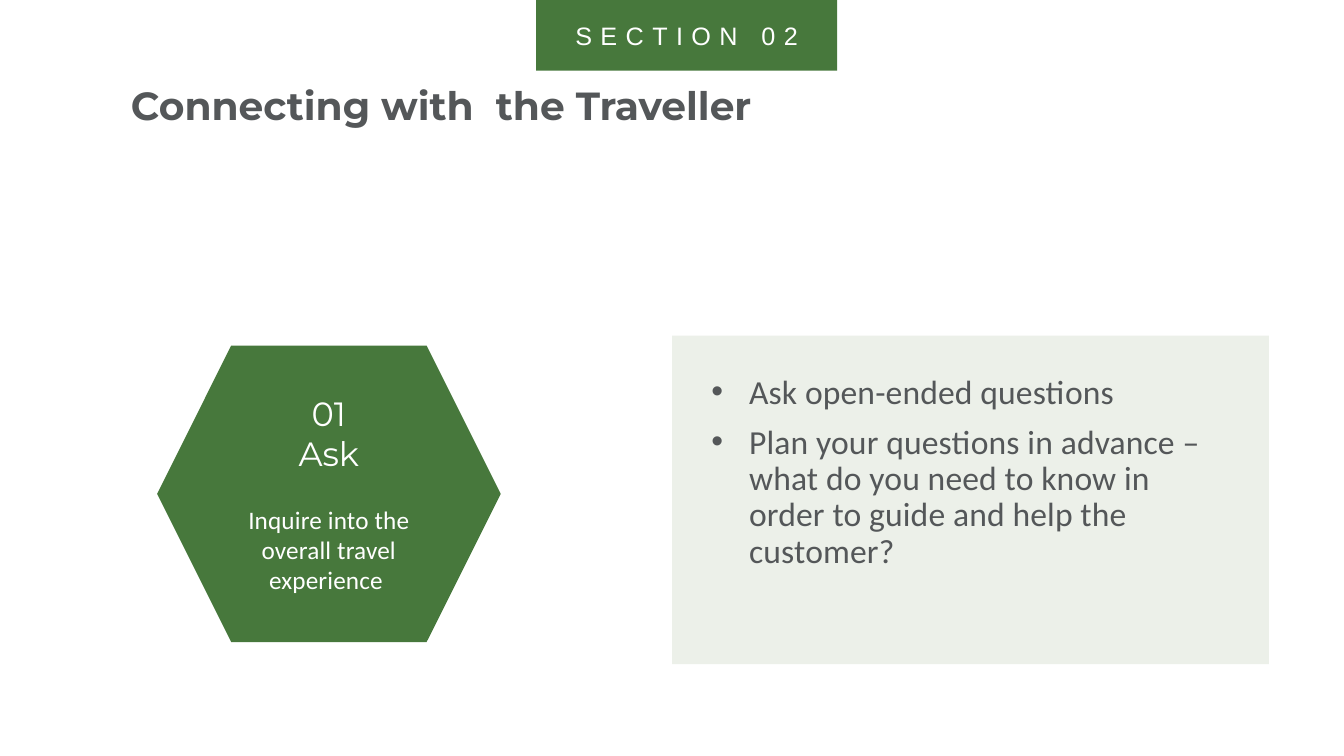
from lxml import etree
from pptx import Presentation
from pptx.dml.color import RGBColor
from pptx.enum.shapes import MSO_SHAPE
from pptx.enum.text import MSO_ANCHOR, PP_ALIGN
from pptx.oxml.ns import qn
from pptx.util import Cm, Pt

RECT, HEXAGON = MSO_SHAPE.RECTANGLE, MSO_SHAPE.HEXAGON
TOP, MIDDLE = MSO_ANCHOR.TOP, MSO_ANCHOR.MIDDLE
LEFT, CENTER = PP_ALIGN.LEFT, PP_ALIGN.CENTER
COLORS = {"green": "47783C", "pale": "ECF0E9", "gray": "545759", "white": "FFFFFF"}

prs = Presentation()
prs.slide_width, prs.slide_height = Cm(33.87), Cm(19.05)
s = prs.slides.add_slide(prs.slide_layouts[6])


def add_block(left, top, width, height, shape=None, fill=None, inset=None, anchor=TOP):
    box = Cm(left), Cm(top), Cm(width), Cm(height)
    if shape is None:
        sp = s.shapes.add_textbox(*box)
    else:
        sp = s.shapes.add_shape(shape, *box)
        sp.shadow.inherit = False
        sp.fill.solid()
        sp.fill.fore_color.rgb = RGBColor.from_string(COLORS[fill])
        sp.line.fill.background()
    tf = sp.text_frame
    tf.word_wrap = True
    tf.vertical_anchor = anchor
    if inset is not None:
        tf.margin_left = tf.margin_top = tf.margin_right = tf.margin_bottom = Cm(inset)
    return tf


def add_text(tf, text, size, font, color, bold=False, align=LEFT, spacing=0,
             before=0, line=1.0, bullet=False):
    first = not tf.paragraphs[0].runs
    p = tf.paragraphs[0] if first else tf.add_paragraph()
    p.alignment = align
    p.line_spacing = line
    p.space_before = Pt(0 if first else before)
    if bullet:
        pPr = p._p.get_or_add_pPr()
        pPr.set("marL", str(Cm(0.95)))
        pPr.set("indent", str(-Cm(0.95)))
        etree.SubElement(pPr, qn("a:buFont")).set("typeface", "Arial")
        etree.SubElement(pPr, qn("a:buChar")).set("char", "•")
    r = p.add_run()
    r.text = text
    r.font.size, r.font.name, r.font.bold = Pt(size), font, bold
    r.font.color.rgb = RGBColor.from_string(COLORS[color])
    if spacing:
        r._r.get_or_add_rPr().set("spc", str(round(spacing * 100)))


# Step hexagon
tf = add_block(3.96, 8.71, 8.66, 7.47, HEXAGON, "green", anchor=MIDDLE)
for text in ("01", "Ask"):
    add_text(tf, text, 24, "Montserrat", "white", align=CENTER)
add_text(tf, "Inquire into the overall travel experience ", 18, "Calibri", "white",
         align=CENTER, spacing=0.1, before=22)

# Title
tf = add_block(2.51, 1.65, 17.55, 4.01, inset=0.79)
add_text(tf, "Connecting with  the Traveller", 28, "Montserrat", "gray", bold=True, line=0.9)

# Advice panel
tf = add_block(16.94, 8.46, 15.04, 8.28, RECT, "pale", inset=0.99)
for text in (
    "Ask open-ended questions",
    "Plan your questions in advance – what do you need to know in order to "
    "guide and help the customer?",
):
    add_text(tf, text, 24, "Calibri", "gray", spacing=0.1, before=10, line=0.9, bullet=True)

# Section tab
tf = add_block(13.51, 0, 7.59, 1.78, RECT, "green", inset=0.51, anchor=MIDDLE)
add_text(tf, "SECTION 02", 18, "Arial", "white", align=CENTER, spacing=6)

prs.save("out.pptx")
